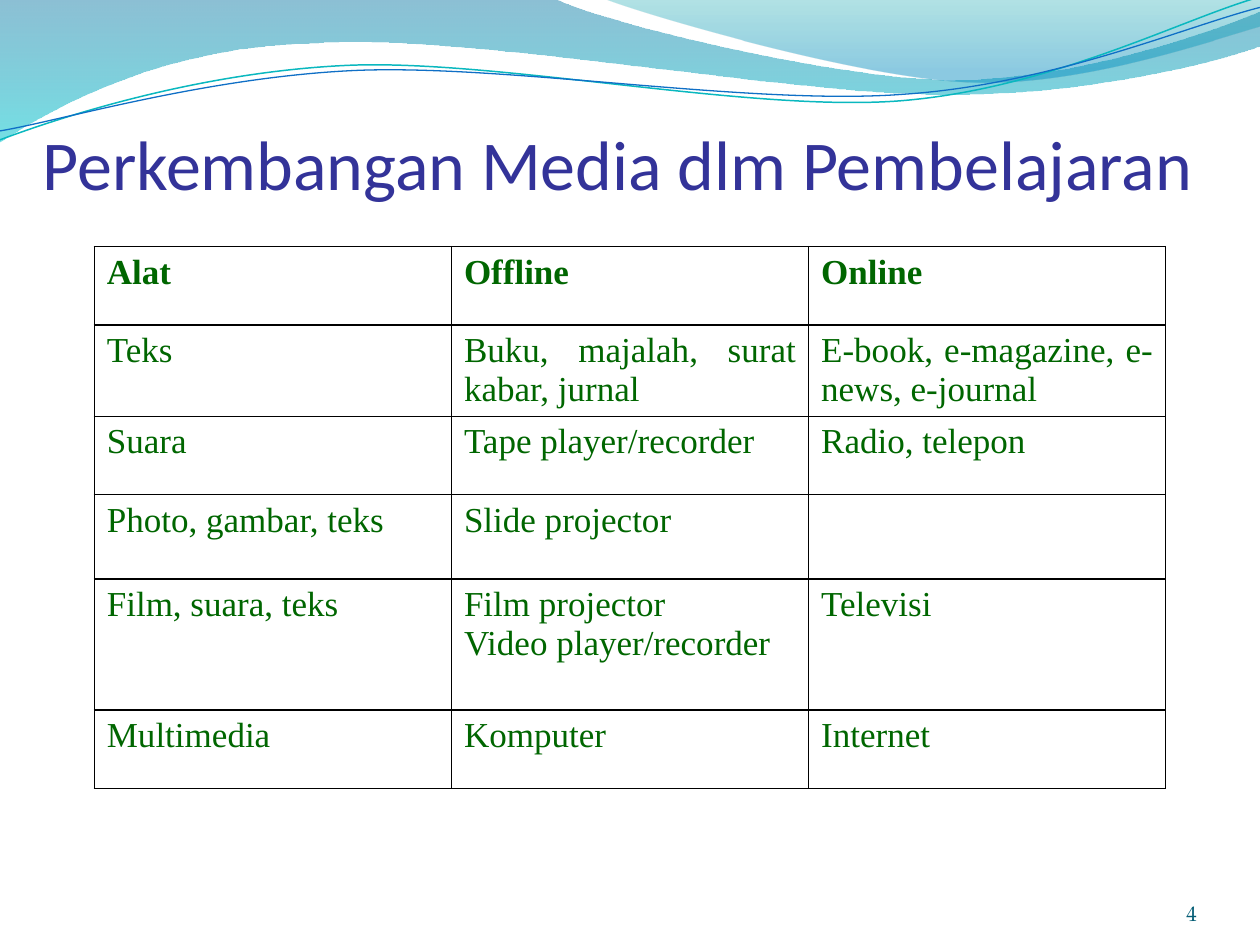
"""Build the slide on the development of learning media: wave header, title and table."""
from dataclasses import dataclass
from typing import Optional

from lxml import etree
from pptx import Presentation
from pptx import util as u
from pptx.dml.color import RGBColor
from pptx.enum import text
from pptx.oxml import ns

NAVY = RGBColor(0x33, 0x33, 0x99)
GREEN = RGBColor(0x00, 0x66, 0x00)
TEAL = RGBColor(0x04, 0x5D, 0x75)
BLACK = RGBColor(0x00, 0x00, 0x00)
CYAN_LINE = RGBColor(0x0A, 0xB8, 0xBF)
BLUE_LINE = RGBColor(0x0F, 0x6F, 0xC6)
DEEP_BLUE = RGBColor(0x00, 0x74, 0xA1)
AQUA = RGBColor(0x00, 0xC6, 0xCF)
SEA_GREEN = RGBColor(0x00, 0xA1, 0xA9)
SKY_BLUE = RGBColor(0x00, 0x8B, 0xBF)

HANGING = u.Cm(0.95)
LINE_ROTATION = 357.3


@dataclass
class Stop:
    position: float
    color: RGBColor
    opacity: int


@dataclass
class Wave:
    """Outline in centimetres: a pair is a line end, six numbers are a cubic curve."""
    segments: list[tuple[float, ...]]
    stops: tuple[Stop, ...] = ()
    line_color: Optional[RGBColor] = None
    line_width: float = 0


@dataclass
class Label:
    content: str
    left: float
    top: float
    width: float
    height: float
    font: str
    size: int
    color: RGBColor
    alignment: text.PP_ALIGN
    inset_top: float = 0


WAVES = [
    Wave([(0, 0), (11.18, -0.03), (12.09, 0.43, 16.87, 1.6, 19.25, 1.6),
          (21.67, 1.6, 24.33, 0.66, 25.4, 0.23), (25.43, 0.91),
          (24.97, 1.12, 22.1, 1.93, 18.95, 1.9), (15.8, 1.9, 9.7, 0.71, 6.53, 0.86),
          (3.28, 0.91, 1.17, 2.11, -0.03, 2.87), (0, 0)],
         (Stop(0, DEEP_BLUE, 45), Stop(1, AQUA, 55))),
    Wave([(12.17, -0.03), (12.93, 0.28, 17.32, 1.57, 19.53, 1.65),
          (21.74, 1.75, 24.41, 0.81, 25.4, 0.53), (25.4, 0), (12.17, -0.03)],
         (Stop(0, SEA_GREEN, 30), Stop(0.8, SKY_BLUE, 45))),
    Wave([(-0.05, 2.22), (1.19, 1.82, 4.02, 1.04, 7.05, 1.05),
          (10.05, 1.07, 15.02, 2.37, 18.08, 2.29), (21.13, 2.2, 23.87, 0.91, 25.41, 0.55)],
         line_color=CYAN_LINE, line_width=0.85),
    Wave([(-0.04, 2.04), (1.16, 1.9, 4.18, 1.15, 7.2, 1.16),
          (10.25, 1.18, 15.13, 2.25, 18.19, 2.16), (21.21, 2.1, 23.93, 1.06, 25.45, 0.75)],
         line_color=BLUE_LINE, line_width=0.75),
]

LABELS = [
    Label("Perkembangan Media dlm Pembelajaran", 0.86, 0.95, 23.7, 3.17,
          "Calibri", 40, NAVY, text.PP_ALIGN.LEFT, 0.13),
    Label("4", 22.02, 17.65, 2.11, 1.02, "TeX Gyre Pagella", 12, TEAL, text.PP_ALIGN.RIGHT),
]

MEDIA_ROWS = [
    ("Alat", "Offline", "Online"),
    ("Teks", "Buku, majalah, surat kabar, jurnal", "E-book, e-magazine, e-news, e-journal"),
    ("Suara", "Tape player/recorder", "Radio, telepon"),
    ("Photo, gambar, teks", "Slide projector", ""),
    ("Film, suara, teks", "Film projector\nVideo player/recorder", "Televisi"),
    ("Multimedia", "Komputer", "Internet"),
]
ROW_HEIGHTS = [1.58, 1.58, 1.58, 1.7, 2.64, 1.58]
COLUMN_WIDTH = 7.2
WRAPPING_ROW = 1


def bend_curves(shape, segments: list[tuple[float, ...]]) -> None:
    """Join each run of three line ends that belongs to a curve into one cubic segment."""
    lines = iter(list(shape._element.iter(ns.qn("a:lnTo"))))
    for segment in segments:
        first = next(lines)
        if len(segment) == 2:
            continue
        curve = etree.Element(ns.qn("a:cubicBezTo"))
        first.addprevious(curve)
        for line in (first, next(lines), next(lines)):
            curve.append(line[0])
            line.getparent().remove(line)


def draw_wave(slide, wave: Wave) -> None:
    points = [(u.Cm(segment[i]), u.Cm(segment[i + 1]))
              for segment in wave.segments for i in range(0, len(segment), 2)]
    builder = slide.shapes.build_freeform(*points[0])
    builder.add_line_segments(points[1:], close=bool(wave.stops))
    shape = builder.convert_to_shape()
    bend_curves(shape, wave.segments[1:])
    shape.shadow.inherit = False
    if not wave.stops:
        shape.rotation = LINE_ROTATION
        shape.fill.background()
        shape.line.color.rgb = wave.line_color
        shape.line.width = u.Pt(wave.line_width)
        return
    shape.line.fill.background()
    shape.fill.gradient()
    shape.fill.gradient_angle = 270
    for gradient_stop, stop in zip(shape.fill.gradient_stops, wave.stops):
        gradient_stop.position = stop.position
        gradient_stop.color.rgb = stop.color
    colors = shape._element.spPr.iter(ns.qn("a:srgbClr"))
    for color, stop in zip(list(colors), wave.stops):
        etree.SubElement(color, ns.qn("a:alpha"), val=str(stop.opacity * 1000))


def add_run(paragraph, content: str, font: str, size: int, color: RGBColor,
            bold: bool = False) -> None:
    run = paragraph.add_run()
    run.text = content
    run.font.name = font
    run.font.size = u.Pt(size)
    run.font.bold = bold
    run.font.color.rgb = color


def draw_label(slide, label: Label) -> None:
    shape = slide.shapes.add_textbox(
        u.Cm(label.left), u.Cm(label.top), u.Cm(label.width), u.Cm(label.height))
    frame = shape.text_frame
    frame.word_wrap = True
    frame.vertical_anchor = text.MSO_ANCHOR.BOTTOM
    frame.margin_left = frame.margin_right = frame.margin_bottom = 0
    frame.margin_top = u.Cm(label.inset_top)
    paragraph = frame.paragraphs[0]
    paragraph.alignment = label.alignment
    add_run(paragraph, label.content, label.font, label.size, label.color)


def set_borders(cell) -> None:
    cell.fill.background()
    properties = cell._tc.get_or_add_tcPr()
    for index, side in enumerate(("lnL", "lnR", "lnT", "lnB")):
        border = etree.Element(ns.qn(f"a:{side}"), w=str(u.Pt(1)))
        fill = etree.SubElement(border, ns.qn("a:solidFill"))
        etree.SubElement(fill, ns.qn("a:srgbClr"), val=str(BLACK))
        properties.insert(index, border)


def fill_cell(cell, content: str, bold: bool, hanging: bool) -> None:
    set_borders(cell)
    if not hanging:
        cell.margin_bottom = u.Cm(0.02)
    frame = cell.text_frame
    for index, line in enumerate(content.split("\n") if content else []):
        paragraph = frame.add_paragraph() if index else frame.paragraphs[0]
        paragraph.alignment = text.PP_ALIGN.JUSTIFY
        if hanging:
            properties = paragraph._p.get_or_add_pPr()
            properties.set("marL", str(HANGING))
            properties.set("indent", str(-HANGING))
        add_run(paragraph, line, "Times New Roman", 20, GREEN, bold)


def draw_media_table(slide) -> None:
    column_count = len(MEDIA_ROWS[0])
    table = slide.shapes.add_table(
        len(MEDIA_ROWS), column_count, u.Cm(1.9), u.Cm(4.97),
        u.Cm(COLUMN_WIDTH * column_count), u.Cm(sum(ROW_HEIGHTS))).table
    table.first_row = table.horz_banding = False
    for column in table.columns:
        column.width = u.Cm(COLUMN_WIDTH)
    for row_index, (contents, height) in enumerate(zip(MEDIA_ROWS, ROW_HEIGHTS)):
        table.rows[row_index].height = u.Cm(height)
        for column_index, content in enumerate(contents):
            fill_cell(table.cell(row_index, column_index), content,
                      bold=row_index == 0, hanging=row_index != WRAPPING_ROW)


def main() -> None:
    presentation = Presentation()
    presentation.slide_width, presentation.slide_height = u.Cm(25.4), u.Cm(19.05)
    slide = presentation.slides.add_slide(presentation.slide_layouts[6])
    for wave in WAVES:
        draw_wave(slide, wave)
    for label in LABELS:
        draw_label(slide, label)
    draw_media_table(slide)
    presentation.save("out.pptx")


if __name__ == "__main__":
    main()
